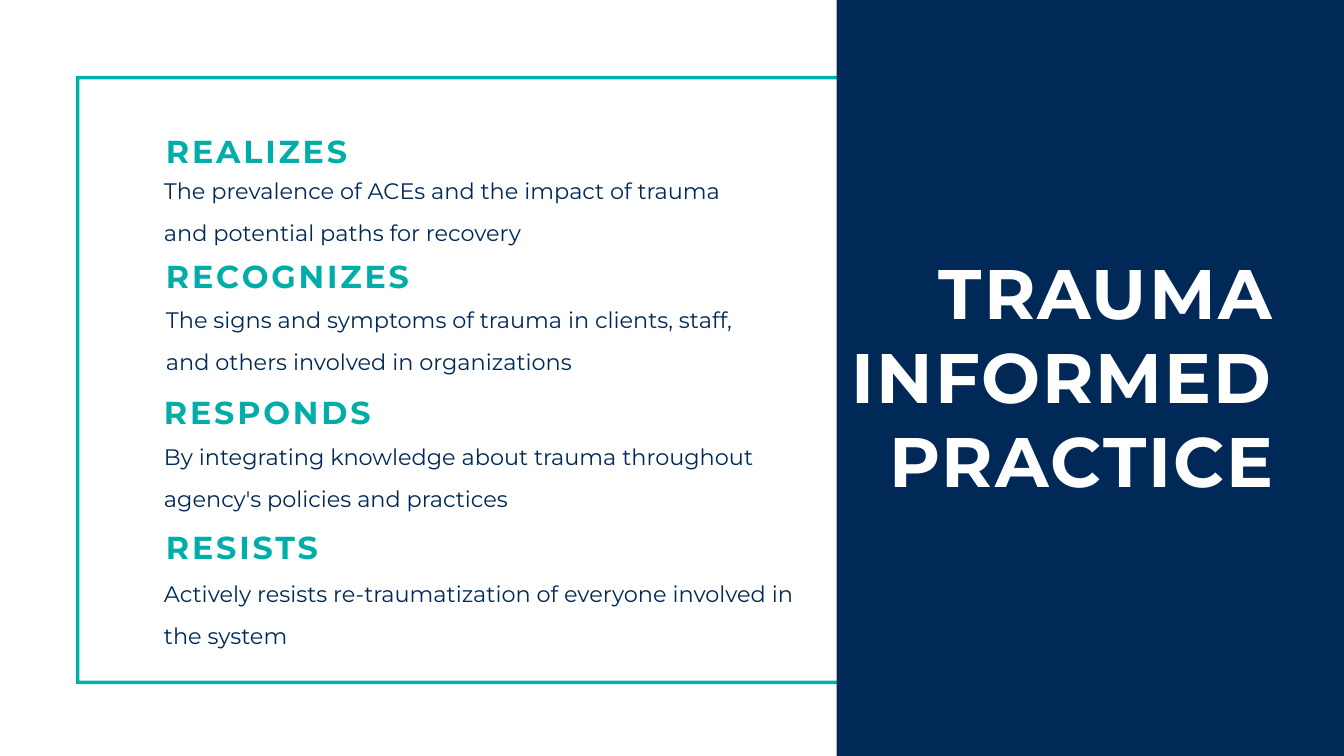
"""Builds the trauma informed practice slide with its four principles."""
from pptx import Presentation
from pptx.dml.color import RGBColor
from pptx.enum import shapes, text
from pptx.util import Inches, Pt

NAVY = RGBColor(0x00, 0x29, 0x57)
TEAL = RGBColor(0x00, 0xAD, 0xA8)
FRAME_TEAL = RGBColor(0x00, 0xB0, 0xAB)
WHITE = RGBColor(0xFF, 0xFF, 0xFF)
FONT = "Montserrat"
WIDTH, HEIGHT = 20, 11.25
FRAME_MARGIN, FRAME_HEIGHT, FRAME_LINE = 1.13, 9.05, 0.05

TITLE = "TRAUMA INFORMED PRACTICE"
# heading, heading left and top, body, body left, top and width
PRINCIPLES = [
    ("REALIZES", 2.47, 1.86,
     "The prevalence of ACEs and the impact of trauma and potential paths for recovery",
     2.44, 2.41, 8.94),
    ("RECOGNIZES", 2.47, 3.73,
     "The signs and symptoms of trauma in clients, staff, and others involved in organizations",
     2.47, 4.33, 9.08),
    ("RESPONDS", 2.44, 5.75,
     "By integrating knowledge about trauma throughout agency's policies and practices",
     2.44, 6.37, 9.48),
    ("RESISTS", 2.47, 7.76,
     "Actively resists re-traumatization of everyone involved in the system",
     2.44, 8.4, 9.48),
]


def add_block(page, kind, color, *bounds):
    block = page.shapes.add_shape(kind, *map(Inches, bounds))
    block.shadow.inherit = False
    block.fill.solid()
    block.fill.fore_color.rgb = color
    block.line.fill.background()
    return block


def write(box, words, size, color, leading, bold=False, tracking=0,
          align=text.PP_ALIGN.LEFT):
    frame = box.text_frame
    frame.word_wrap = True
    frame.auto_size = text.MSO_AUTO_SIZE.NONE
    frame.vertical_anchor = text.MSO_ANCHOR.TOP
    frame.margin_left = frame.margin_right = 0
    frame.margin_top = frame.margin_bottom = 0
    para = frame.paragraphs[0]
    span = para.add_run()
    span.text = words
    if tracking:
        span.font._element.set("spc", str(round(tracking * 100)))
    para.alignment = align
    para.line_spacing = Pt(leading)
    font = para.font
    font.name, font.size, font.bold = FONT, Pt(size), bold
    font.color.rgb = color


def add_text(page, bounds, *content, **style):
    write(page.shapes.add_textbox(*map(Inches, bounds)), *content, **style)


def main():
    deck = Presentation()
    deck.slide_width, deck.slide_height = Inches(WIDTH), Inches(HEIGHT)
    page = deck.slides.add_slide(deck.slide_layouts[5])

    border = add_block(page, shapes.MSO_SHAPE.FRAME, FRAME_TEAL,
                       FRAME_MARGIN, FRAME_MARGIN, 19.39, FRAME_HEIGHT)
    border.adjustments[0] = FRAME_LINE / FRAME_HEIGHT
    panel = add_block(page, shapes.MSO_SHAPE.RECTANGLE, NAVY, 12.45, 0, 7.73, 11.51)

    title = page.shapes.title
    title.left, title.top, title.width, title.height = map(
        Inches, (12.41, 3.72, 6.55, 3.79))
    write(title, TITLE, 75, WHITE, 90, bold=True, tracking=2.2,
          align=text.PP_ALIGN.RIGHT)
    panel.element.addnext(title.element)

    for heading, head_left, head_top, body, left, top, width in PRINCIPLES:
        add_text(page, (head_left, head_top, 7.54, 0.63),
                 heading, 34, TEAL, 47.6, bold=True, tracking=3.1)
        add_text(page, (left, top, width, 1.19), body, 24, NAVY, 45)

    deck.save("out.pptx")


if __name__ == "__main__":
    main()
